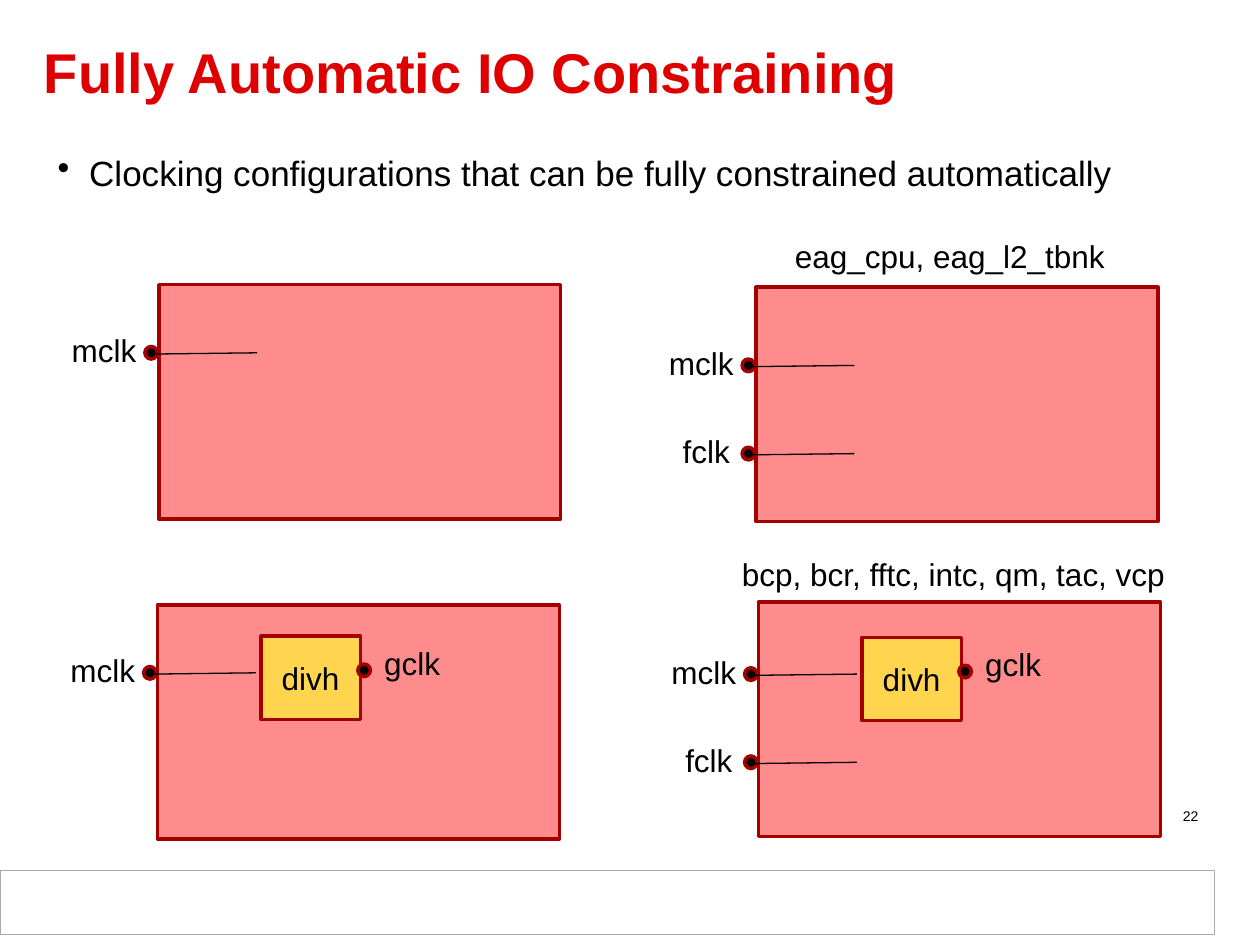
"""Build the slide on clocking configurations that can be constrained automatically."""
from lxml import etree
from pptx import Presentation
from pptx import util as u
from pptx.dml.color import RGBColor
from pptx.enum import shapes, text
from pptx.oxml.ns import qn

TITLE = "Fully Automatic IO Constraining"
BULLET = "Clocking configurations that can be fully constrained automatically"
PAGE = "22"
COLORS = {"title": "DE0000", "ink": "000000", "block": "FF8C8C", "edge": "A40000",
          "divider": "FFD54F", "paper": "FFFFFF", "footer": "AAAAAA"}
BLOCKS = [
    {"at": (1.26, 2.26), "clocks": [("mclk", 0.49)]},
    {"at": (6, 2.28), "clocks": [("mclk", 0.57), ("fclk", 1.27)],
     "caption": ("eag_cpu, eag_l2_tbnk", 6.21, 1.83, 2.68)},
    {"at": (1.25, 4.8), "clocks": [("mclk", 0.49)], "divided": True},
    {"at": (6.02, 4.78), "clocks": [("mclk", 0.52), ("fclk", 1.22)], "divided": True,
     "caption": ("bcp, bcr, fftc, intc, qm, tac, vcp", 5.79, 4.36, 3.59)},
]
LABELS = {"mclk": (-0.79, 0.72), "fclk": (-0.68, 0.58)}
BLOCK_SIZE = (3.19, 1.86)
DIVIDER_SIZE = (0.79, 0.66)
PIN = 0.1


def color(name):
    return RGBColor.from_string(COLORS[name])


def write(frame, words, size, ink="ink", bold=False, align=text.PP_ALIGN.LEFT):
    paragraph = frame.paragraphs[0]
    paragraph.text = words
    paragraph.alignment = align
    font = paragraph.font
    font.name, font.size, font.bold = "Arial", u.Pt(size), bold
    font.color.rgb = color(ink)
    return paragraph


def add_text(slide, words, left, top, width, height=0.4, size=18, wrap=False, **style):
    frame = slide.shapes.add_textbox(*map(u.Inches, (left, top, width, height))).text_frame
    frame.word_wrap = wrap
    return frame, write(frame, words, size, **style)


def add_box(slide, left, top, width, height, fill, edge="edge", weight=2,
            kind=shapes.MSO_SHAPE.RECTANGLE):
    box = slide.shapes.add_shape(kind, *map(u.Inches, (left, top, width, height)))
    box.shadow.inherit = False
    box.fill.solid()
    box.fill.fore_color.rgb = color(fill)
    box.line.color.rgb = color(edge)
    box.line.width = u.Pt(weight)
    return box


def add_pin(slide, left, top):
    add_box(slide, left, top, PIN, PIN, "ink", kind=shapes.MSO_SHAPE.FLOWCHART_CONNECTOR)


def add_wire(slide, left, top):
    wire = slide.shapes.add_connector(
        shapes.MSO_CONNECTOR.STRAIGHT,
        *map(u.Inches, (left, top, left + 0.82, top - 0.01)))
    wire.line.color.rgb = color("ink")
    wire.line.width = u.Pt(0.75)
    etree.SubElement(wire._element.spPr, qn("a:effectLst"))


def add_block(slide, at, clocks, divided=False, caption=None):
    left, top = at
    add_box(slide, left, top, *BLOCK_SIZE, "block")
    for clock, drop in clocks:
        offset, width = LABELS[clock]
        pin_top = top + drop
        add_pin(slide, left - 0.11, pin_top)
        add_wire(slide, left - 0.04, pin_top + 0.06)
        add_text(slide, clock, left + offset, pin_top - 0.17, width)
    if divided:
        pin_top = top + clocks[0][1]
        divider = add_box(slide, left + 0.82, pin_top - 0.24, *DIVIDER_SIZE, "divider")
        divider.text_frame.vertical_anchor = text.MSO_ANCHOR.MIDDLE
        write(divider.text_frame, "divh", 18, align=text.PP_ALIGN.CENTER)
        add_pin(slide, left + 1.59, pin_top - 0.02)
        add_text(slide, "gclk", left + 1.7, pin_top - 0.23, 0.65)
    if caption:
        add_text(slide, *caption)


def main():
    deck = Presentation()
    deck.slide_width, deck.slide_height = u.Inches(10), u.Inches(7.5)
    slide = deck.slides.add_slide(deck.slide_layouts[6])

    add_box(slide, 0, 6.91, 9.64, 0.51, "paper", "footer", 0.75)
    frame, title = add_text(slide, TITLE, 0.25, 0.16, 9.25, 0.89, 32, True,
                            ink="title", bold=True)
    frame.vertical_anchor = text.MSO_ANCHOR.MIDDLE
    title.line_spacing = 0.85

    frame = slide.shapes.add_textbox(*map(u.Inches, (0.36, 1.15, 9.26, 0.5))).text_frame
    frame.word_wrap = True
    properties = frame.paragraphs[0]._p.get_or_add_pPr()
    properties.set("marL", str(u.Inches(0.25)))
    properties.set("indent", str(u.Inches(-0.25)))
    etree.SubElement(properties, qn("a:buChar"), char="•")
    write(frame, BULLET, 20)

    add_text(slide, PAGE, 7.28, 6.36, 2.33, 0.23, 8, True, align=text.PP_ALIGN.RIGHT)
    for block in BLOCKS:
        add_block(slide, **block)
    deck.save("out.pptx")


if __name__ == "__main__":
    main()
